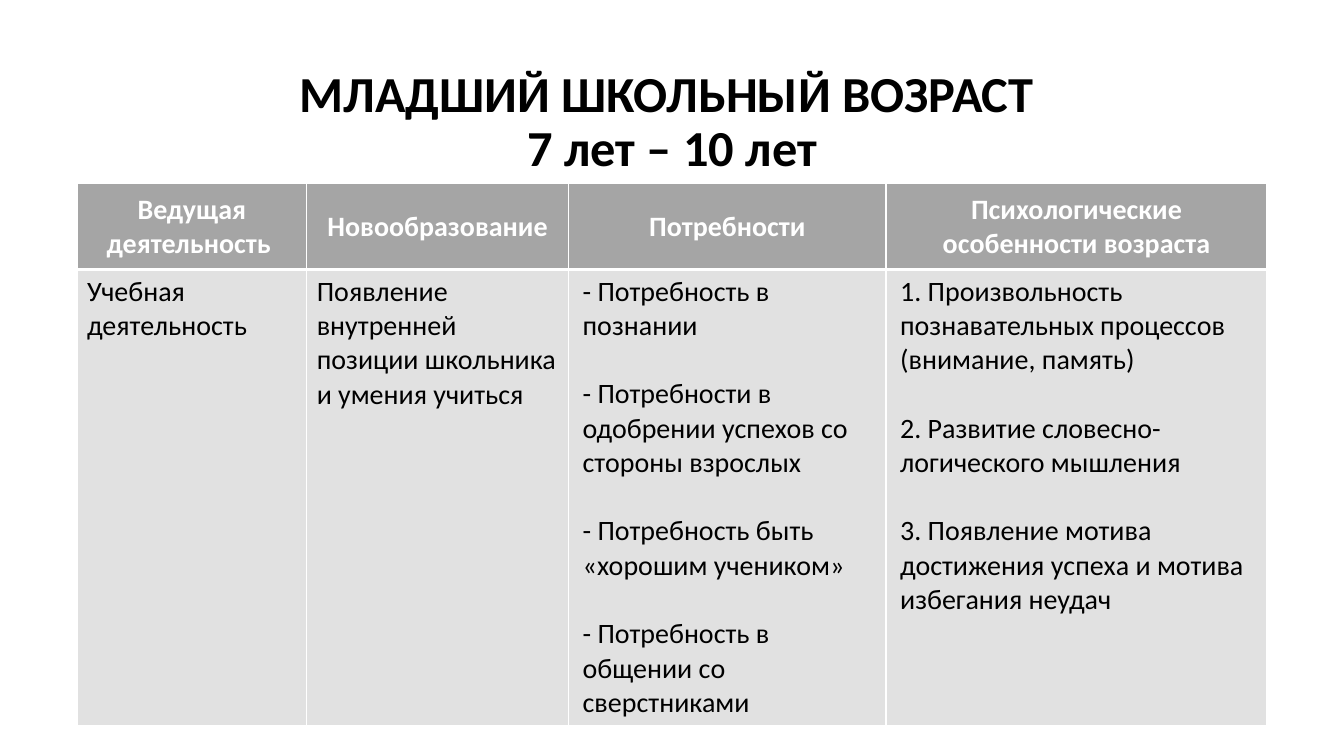
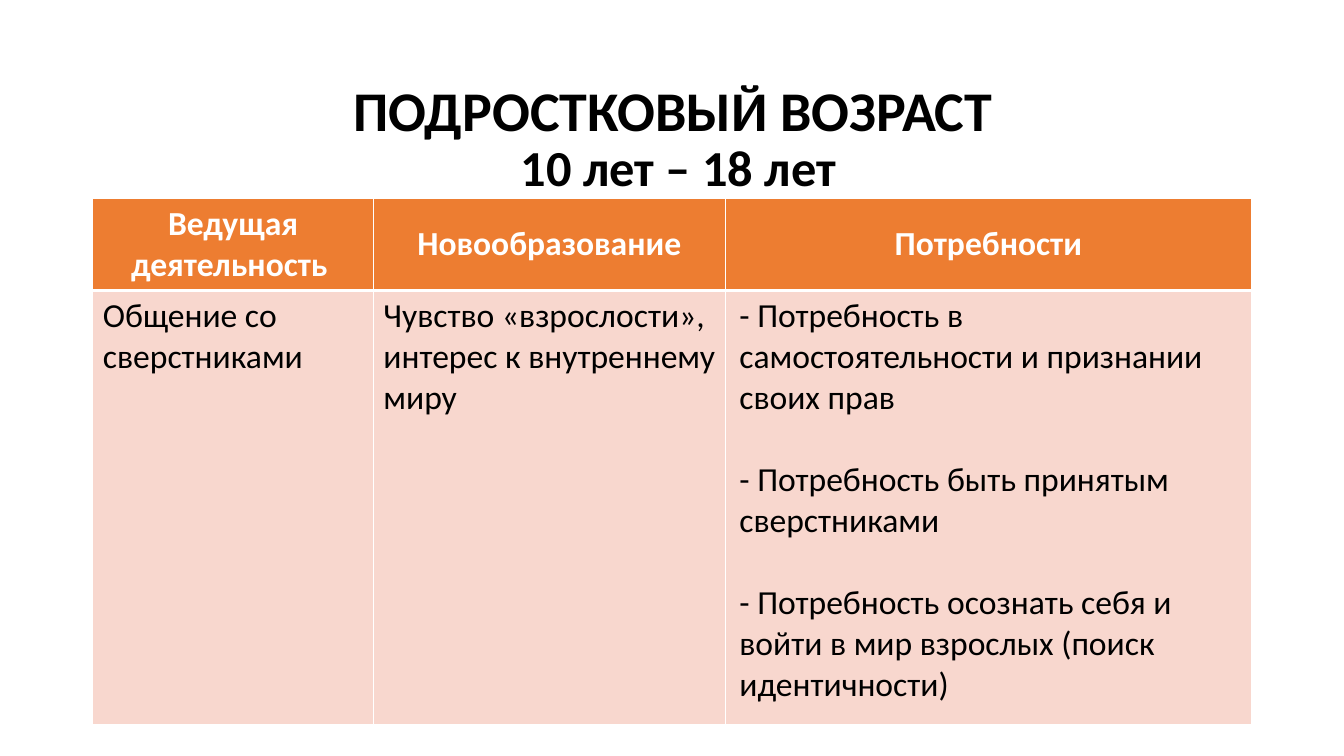
from dataclasses import dataclass

from lxml import etree
from pptx import Presentation
from pptx.dml.color import RGBColor
from pptx.enum.text import MSO_ANCHOR, MSO_AUTO_SIZE, PP_ALIGN
from pptx.oxml.ns import qn
from pptx.util import Cm, Pt

CENTER = PP_ALIGN.CENTER
LEFT = PP_ALIGN.LEFT
MIDDLE = MSO_ANCHOR.MIDDLE
TOP = MSO_ANCHOR.TOP
NO_AUTOFIT = MSO_AUTO_SIZE.NONE
TITLE_ONLY = 5


@dataclass(frozen=True)
class Theme:
    font: str = "Calibri"
    text: str = "000000"
    light: str = "FFFFFF"
    gray: tuple = ("A5A5A5", "E1E1E1")
    orange: tuple = ("ED7D31", "F8D7CE")
    title_large: int = 40
    title_size: int = 36
    table_large: int = 24
    table_size: int = 20
    line_height: float = 1.22
    thin: int = 1
    thick: int = 3


class Deck:
    def __init__(self, theme):
        self.theme = theme
        self.presentation = Presentation()
        self.presentation.slide_width = Cm(33.87)
        self.presentation.slide_height = Cm(19.05)
        self.slide = None

    def add_slide(self):
        layout = self.presentation.slide_layouts[TITLE_ONLY]
        self.slide = self.presentation.slides.add_slide(layout)

    def style_font(self, font, size, color, bold):
        font.name = self.theme.font
        font.size = Pt(size)
        font.bold = bold
        font.color.rgb = RGBColor.from_string(color)

    def add_title(self, text, sizes, left, top, width, height):
        title = self.slide.shapes.title
        title.left, title.top = Cm(left), Cm(top)
        title.width, title.height = Cm(width), Cm(height)
        frame = title.text_frame
        frame.text = text
        frame.word_wrap = True
        frame.auto_size = NO_AUTOFIT
        frame.vertical_anchor = MIDDLE
        paragraph = frame.paragraphs[0]
        paragraph.alignment = CENTER
        paragraph.line_spacing = 0.9
        for run, size in zip(paragraph.runs, sizes):
            self.style_font(run.font, size, self.theme.text, True)

    def add_borders(self, cell, top, bottom):
        properties = cell._tc.get_or_add_tcPr()
        thin = self.theme.thin
        widths = {"a:lnL": thin, "a:lnR": thin, "a:lnT": top, "a:lnB": bottom}
        for position, (side, width) in enumerate(widths.items()):
            line = etree.Element(qn(side), w=str(Pt(width)))
            fill = etree.SubElement(line, qn("a:solidFill"))
            etree.SubElement(fill, qn("a:srgbClr"), val=self.theme.light)
            properties.insert(position, line)

    def fill_cell(self, cell, lines, size, fill, header):
        theme = self.theme
        cell.fill.solid()
        cell.fill.fore_color.rgb = RGBColor.from_string(fill)
        cell.vertical_anchor = MIDDLE if header else TOP
        cell.text_frame.text = "\n".join(lines)
        for index, paragraph in enumerate(cell.text_frame.paragraphs):
            paragraph.alignment = CENTER if header else LEFT
            if len(lines) > 1:
                paragraph._p.get_or_add_pPr().set("marL", str(Cm(0.1)))
            if index:
                paragraph.space_before = Pt(round(size * theme.line_height, 1))
            for run in paragraph.runs:
                self.style_font(run.font, size, theme.light if header else theme.text, header)
        if header:
            self.add_borders(cell, theme.thin, theme.thick)
        else:
            self.add_borders(cell, theme.thick, theme.thin)

    def add_age_table(self, columns, left, top, widths, heights, size, fills):
        frame = self.slide.shapes.add_table(
            len(heights), len(columns), Cm(left), Cm(top), Cm(sum(widths)), Cm(sum(heights)))
        table = frame.table
        table.horz_banding = False
        for row, height in zip(table.rows, heights):
            row.height = Cm(height)
        for index, (heading, lines) in enumerate(columns.items()):
            table.columns[index].width = Cm(widths[index])
            self.fill_cell(table.cell(0, index), [heading], size, fills[0], True)
            self.fill_cell(table.cell(1, index), lines, size, fills[1], False)


def main():
    theme = Theme()
    deck = Deck(theme)

    deck.add_slide()
    deck.add_title("МЛАДШИЙ ШКОЛЬНЫЙ ВОЗРАСТ \v7 лет – 10 лет",
                   (theme.title_size, theme.title_size), 3.94, 1.52, 26, 3.18)
    deck.add_age_table(
        {
            "Ведущая деятельность ": ["Учебная деятельность"],
            "Новообразование": ["Появление внутренней позиции школьника и умения учиться"],
            "Потребности": [
                "- Потребность в познании",
                "- Потребности в одобрении успехов со стороны взрослых",
                "- Потребность быть «хорошим учеником»",
                "- Потребность в общении со сверстниками",
            ],
            "Психологические особенности возраста": [
                "1. Произвольность познавательных процессов (внимание, память)",
                "2. Развитие словесно-логического мышления",
                "3. Появление мотива достижения успеха и мотива избегания неудач",
            ],
        },
        1.94, 4.63, (5.79, 6.6, 8, 9.6), (2.16, 11.5), theme.table_size, theme.gray)

    deck.add_slide()
    deck.add_title("ПОДРОСТКОВЫЙ ВОЗРАСТ\v 10 лет – 18 лет",
                   (theme.title_large, theme.title_size), 6.58, 1.73, 20.75, 3.6)
    deck.add_age_table(
        {
            "Ведущая деятельность ": ["Общение со сверстниками"],
            "Новообразование": ["Чувство «взрослости», интерес к внутреннему миру"],
            "Потребности": [
                "- Потребность в самостоятельности и признании своих прав",
                "- Потребность быть принятым сверстниками",
                "- Потребность осознать себя и войти в мир взрослых (поиск идентичности)",
            ],
        },
        2.34, 5, (7.07, 8.87, 13.26), (2.32, 10.93), theme.table_large, theme.orange)

    deck.presentation.save("out.pptx")


if __name__ == "__main__":
    main()
